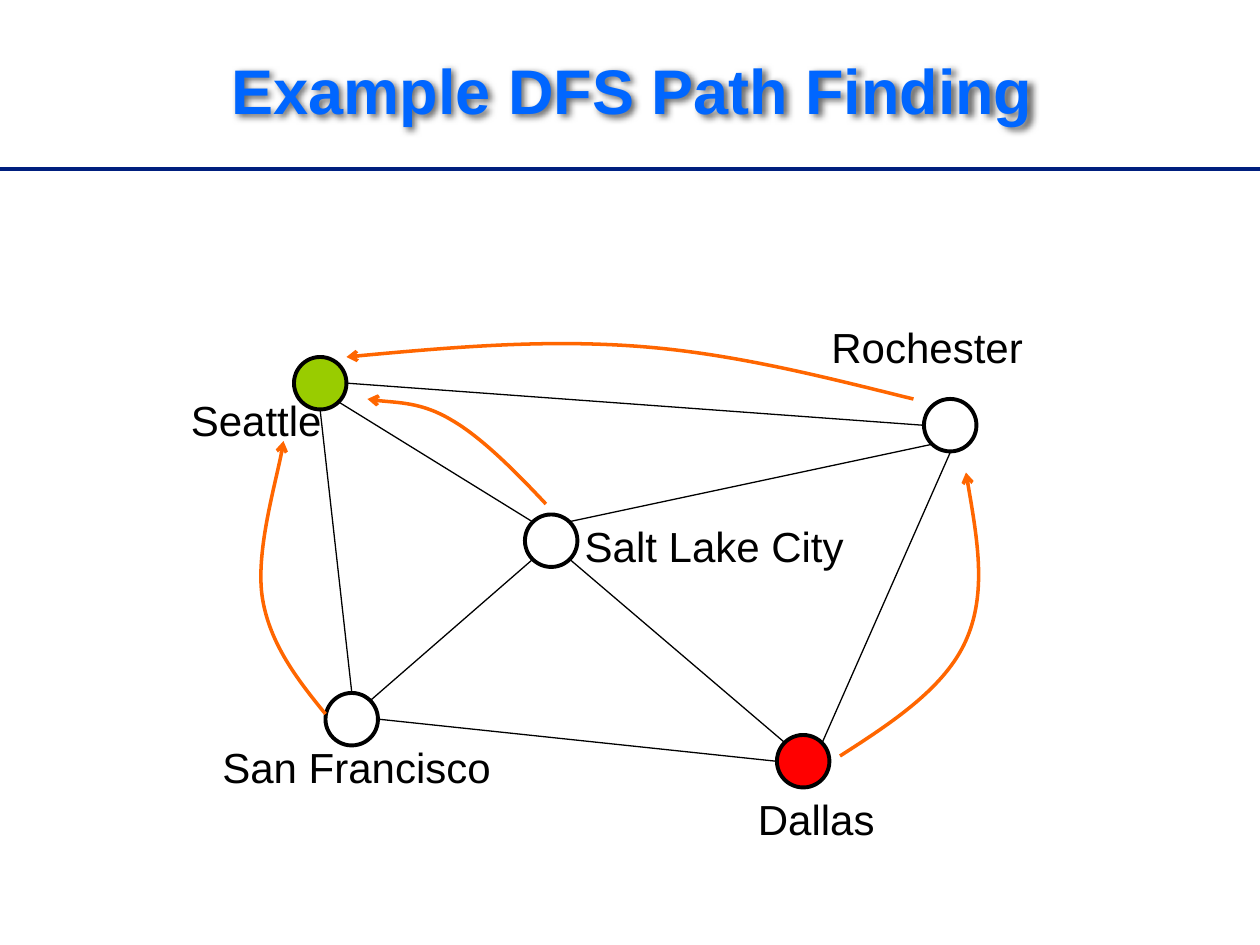
from math import cos, radians, sin

from lxml import etree
from pptx import Presentation
from pptx.dml.color import RGBColor
from pptx.enum.shapes import MSO_CONNECTOR, MSO_SHAPE
from pptx.enum.text import MSO_ANCHOR, MSO_AUTO_SIZE, PP_ALIGN
from pptx.oxml.ns import qn
from pptx.util import Inches, Pt

STRAIGHT = MSO_CONNECTOR.STRAIGHT
OVAL = MSO_SHAPE.OVAL
MIDDLE, TOP = MSO_ANCHOR.MIDDLE, MSO_ANCHOR.TOP
CENTER, LEFT = PP_ALIGN.CENTER, PP_ALIGN.LEFT
FIXED, GROW = MSO_AUTO_SIZE.NONE, MSO_AUTO_SIZE.SHAPE_TO_FIT_TEXT

WIDTH, HEIGHT = 10, 7.5
COLS = 120
NODE_SIZE = 5
EDGE_RADIUS = 2.6
FONT = "Arial"
COLORS = {
    "title": "0066FF",
    "rule": "001F7E",
    "ink": "000000",
    "plain": "FFFFFF",
    "start": "99CC00",
    "goal": "FF0000",
    "path": "FF6600",
}

CITIES = {
    "San Francisco": ((33.5, 68.5), "plain", (20, 70, 28)),
    "Seattle": ((30.5, 36.5), "start", (17, 37, 15)),
    "Salt Lake City": ((52.5, 51.5), "plain", (54.5, 49, 27.5)),
    "Dallas": ((76.5, 72.5), "goal", (71, 75, 13.6)),
    "Rochester": ((90.5, 40.5), "plain", (78, 30, 21)),
}

EDGES = [
    ("San Francisco", 270, "Seattle", 90),
    ("Rochester", 90, "Dallas", 315),
    ("Rochester", 180, "Seattle", 0),
    ("Seattle", 45, "Salt Lake City", 225),
    ("San Francisco", 315, "Salt Lake City", 135),
    ("Salt Lake City", 45, "Dallas", 225),
    ("Salt Lake City", 315, "Rochester", 135),
    ("Dallas", 180, "San Francisco", 0),
]

BACK_PATHS = [
    [(31, 68), (28.3, 64.7), (25.7, 61.3), (25, 57), (24.3, 52.7), (26.7, 44.5), (27, 42)],
    [(52, 48), (49, 44.8), (45.8, 41.6), (43, 40), (40.2, 38.3), (36.4, 38.3), (35, 38)],
    [(87, 38), (78.5, 35.9), (70, 33.7), (61, 33), (52, 32.3), (42.5, 33.1), (33, 34)],
    [(80, 72), (85, 68.8), (90, 65.5), (92, 61), (94, 56.5), (93, 50.8), (92, 45)],
]


def grid(*values):
    return [Inches(v * WIDTH / COLS) for v in values]


def rgb(name):
    return RGBColor.from_string(COLORS[name])


def style_line(sp, color, width):
    sp.line.color.rgb = rgb(color)
    sp.line.width = Pt(width)


def add_text(s, text, box, size=24, color="ink", bold=False, align=LEFT,
             anchor=TOP, wrap=False, fit=GROW, spacing=1.0):
    sp = s.shapes.add_textbox(*grid(*box))
    tf = sp.text_frame
    tf.auto_size = fit
    tf.word_wrap = wrap
    tf.vertical_anchor = anchor
    p = tf.paragraphs[0]
    p.alignment = align
    p.line_spacing = spacing
    r = p.add_run()
    r.text = text
    r.font.name = FONT
    r.font.size = Pt(size)
    r.font.bold = bold
    r.font.color.rgb = rgb(color)
    return sp


def add_shadow(sp):
    effects = etree.SubElement(sp.element.spPr, qn("a:effectLst"))
    shadow = etree.SubElement(effects, qn("a:outerShdw"), blurRad="50800",
                              dist="25400", dir="2700000", algn="tl", rotWithShape="0")
    color = etree.SubElement(shadow, qn("a:srgbClr"), val=COLORS["ink"])
    etree.SubElement(color, qn("a:alpha"), val="60000")


def add_line(s, start, end, color="ink", width=0.75):
    cxn = s.shapes.add_connector(STRAIGHT, *grid(*start, *end))
    style_line(cxn, color, width)
    etree.SubElement(cxn.element.spPr, qn("a:effectLst"))


def add_node(s, center, fill):
    x, y = center
    half = NODE_SIZE / 2
    sp = s.shapes.add_shape(OVAL, *grid(x - half, y - half, NODE_SIZE, NODE_SIZE))
    sp.shadow.inherit = False
    sp.fill.solid()
    sp.fill.fore_color.rgb = rgb(fill)
    style_line(sp, "ink", 2.25)


def rim(city, degrees):
    x, y = CITIES[city][0]
    angle = radians(degrees)
    return x + EDGE_RADIUS * cos(angle), y + EDGE_RADIUS * sin(angle)


def add_curved_arrow(s, points):
    start, *rest = [grid(*point) for point in points]
    builder = s.shapes.build_freeform(*start)
    builder.add_line_segments(rest, close=False)
    sp = builder.convert_to_shape()
    sp.shadow.inherit = False
    sp.fill.background()
    style_line(sp, "path", 2)
    path = next(sp.element.iter(qn("a:path")))
    segments = path.findall(qn("a:lnTo"))
    for i in range(0, len(segments), 3):
        curve = etree.SubElement(path, qn("a:cubicBezTo"))
        for segment in segments[i:i + 3]:
            curve.append(segment[0])
            path.remove(segment)
    etree.SubElement(sp.element.spPr.find(qn("a:ln")), qn("a:tailEnd"), type="arrow")


def main():
    prs = Presentation()
    prs.slide_width, prs.slide_height = Inches(WIDTH), Inches(HEIGHT)
    s = prs.slides.add_slide(prs.slide_layouts[6])

    add_line(s, (0, 16.1), (COLS, 16.1), color="rule", width=2)
    title = add_text(s, "Example DFS Path Finding", (13.1, 3, 94.3, 11.9), size=36,
                     color="title", bold=True, align=CENTER, anchor=MIDDLE,
                     wrap=True, fit=FIXED, spacing=0.9)
    add_shadow(title)

    for center, fill, _ in CITIES.values():
        add_node(s, center, fill)
    for origin, leave, target, arrive in EDGES:
        add_line(s, rim(origin, leave), rim(target, arrive))
    for name, (_, _, (x, y, width)) in CITIES.items():
        add_text(s, name, (x, y, width, 6))
    for points in BACK_PATHS:
        add_curved_arrow(s, points)

    prs.save("out.pptx")


if __name__ == "__main__":
    main()
